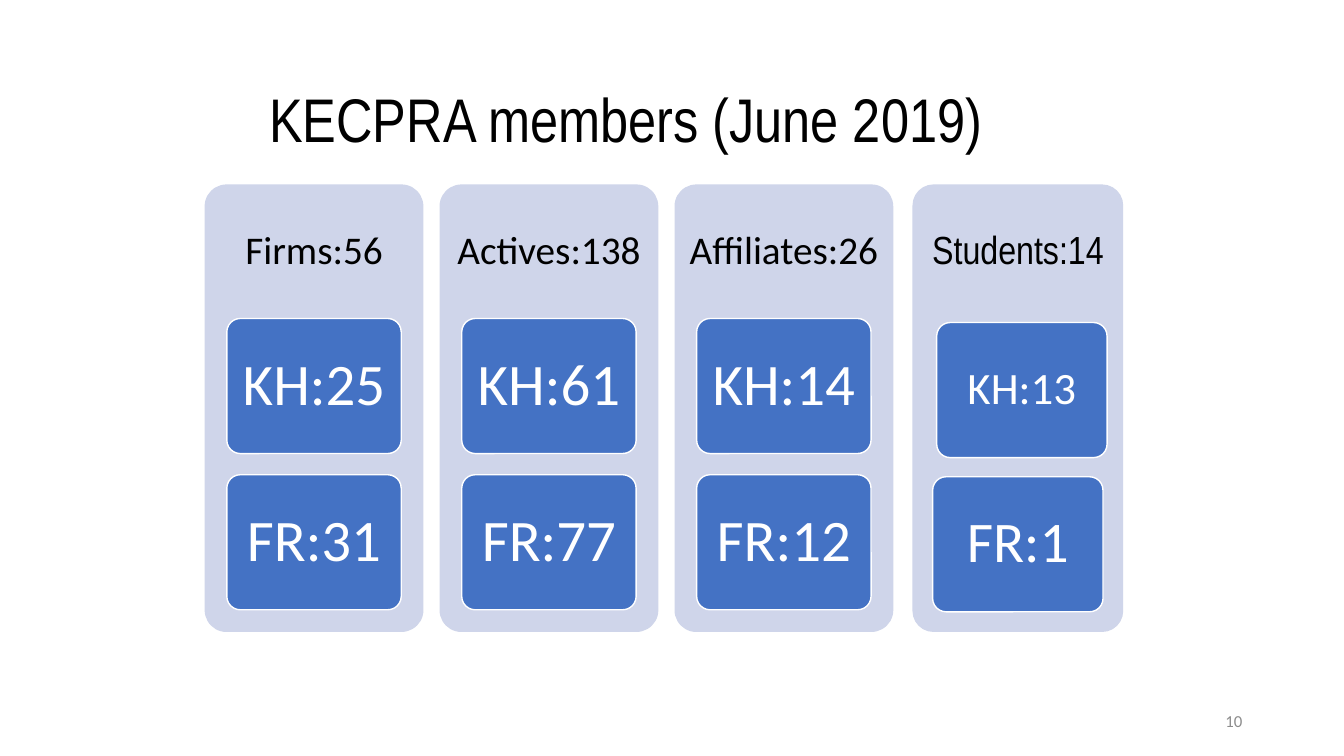
from dataclasses import dataclass

from pptx import Presentation
from pptx.dml.color import RGBColor
from pptx.enum.shapes import MSO_SHAPE
from pptx.enum.text import MSO_ANCHOR, PP_ALIGN
from pptx.util import Inches, Pt

ROUNDED = MSO_SHAPE.ROUNDED_RECTANGLE
MIDDLE = MSO_ANCHOR.MIDDLE
LEFT, CENTER, RIGHT = PP_ALIGN.LEFT, PP_ALIGN.CENTER, PP_ALIGN.RIGHT


@dataclass(frozen=True)
class Theme:
    ink: str = "000000"
    white: str = "FFFFFF"
    muted: str = "8C8C8C"
    panel: str = "CFD5EA"
    tile: str = "4472C4"
    body_font: str = "Calibri"
    narrow_font: str = "Arial Narrow"
    title_size: int = 44
    heading_size: int = 28
    tile_size: int = 42
    last_kh_size: int = 32
    last_fr_size: int = 41
    number_size: int = 12


def write(frame, text, *, size, color, font, align=CENTER, spacing=0.9, inset=(0.1, 0.05)):
    frame.word_wrap = True
    frame.vertical_anchor = MIDDLE
    frame.margin_left = frame.margin_right = Inches(inset[0])
    frame.margin_top = frame.margin_bottom = Inches(inset[1])
    paragraph = frame.paragraphs[0]
    paragraph.alignment = align
    paragraph.line_spacing = spacing
    run = paragraph.add_run()
    run.text = text
    run.font.size = Pt(size)
    run.font.name = font
    run.font.color.rgb = RGBColor.from_string(color)


class MemberSlide:
    def __init__(self, slide, theme):
        self.slide = slide
        self.theme = theme

    def title(self, text, box):
        heading = self.slide.shapes.title
        heading.left, heading.top, heading.width, heading.height = map(Inches, box)
        write(heading.text_frame, text, size=self.theme.title_size,
              color=self.theme.ink, font=self.theme.narrow_font, align=LEFT)

    def label(self, text, box, **style):
        label = self.slide.shapes.add_textbox(*map(Inches, box))
        write(label.text_frame, text, **style)

    def rounded(self, box, fill, outline=None):
        card = self.slide.shapes.add_shape(ROUNDED, *map(Inches, box))
        card.adjustments[0] = 0.1
        card.shadow.inherit = False
        card.fill.solid()
        card.fill.fore_color.rgb = RGBColor.from_string(fill)
        if outline:
            card.line.color.rgb = RGBColor.from_string(outline)
            card.line.width = Pt(1)
        else:
            card.line.fill.background()
        return card

    def panel(self, heading, left, width, font):
        top = 1.83
        self.rounded((left, top, width, 4.44), self.theme.panel)
        self.label(heading, (left, top, width, 1.33), size=self.theme.heading_size,
                   color=self.theme.ink, font=font, inset=(0.12, 0.12))

    def tile(self, text, left, top, width, size):
        card = self.rounded((left, top, width, 1.34), self.theme.tile, self.theme.white)
        write(card.text_frame, text, size=size, color=self.theme.white,
              font=self.theme.body_font)


def main():
    deck = Presentation()
    deck.slide_width, deck.slide_height = Inches(13.33), Inches(7.5)
    theme = Theme()
    page = MemberSlide(deck.slides.add_slide(deck.slide_layouts[5]), theme)

    page.title("KECPRA members (June 2019)", (2.57, 0.78, 8.33, 0.87))
    page.label("10", (9.42, 6.95, 3, 0.4), size=theme.number_size, color=theme.muted,
               font=theme.body_font, align=RIGHT, spacing=1)

    groups = [
        ("Firms:56", "KH:25", "FR:31"),
        ("Actives:138", "KH:61", "FR:77"),
        ("Affiliates:26", "KH:14", "FR:12"),
    ]
    for index, (heading, khmer, french) in enumerate(groups):
        left = 2.03 + index * 2.33
        page.panel(heading, left, 2.17, theme.body_font)
        for count, top in ((khmer, 3.16), (french, 4.71)):
            page.tile(count, left + 0.22, top, 1.73, theme.tile_size)

    page.panel("Students:14", 9.05, 2.09, theme.narrow_font)
    page.tile("KH:13", 9.29, 3.2, 1.69, theme.last_kh_size)
    page.tile("FR:1", 9.25, 4.73, 1.69, theme.last_fr_size)

    deck.save("out.pptx")


if __name__ == "__main__":
    main()
